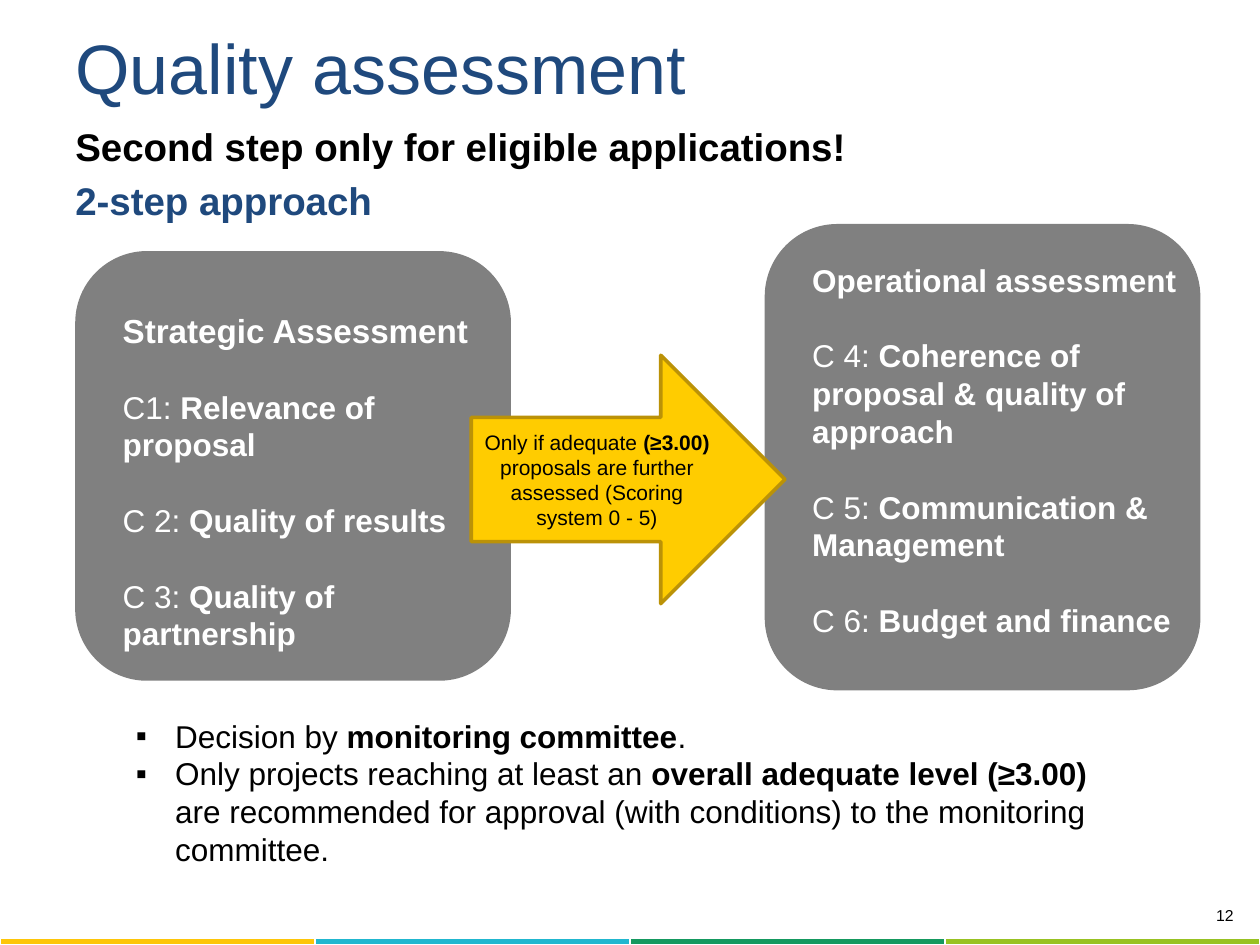
from lxml.etree import SubElement
from pptx import Presentation
from pptx.dml.color import RGBColor
from pptx.enum.shapes import MSO_SHAPE
from pptx.enum.text import MSO_ANCHOR, PP_ALIGN
from pptx.oxml.ns import qn
from pptx.util import Pt

COLORS = {
    "black": "000000", "white": "FFFFFF", "navy": "1F497D", "gray": "808080",
    "arrow": "FFCC00", "arrow_edge": "BB9207",
    "yellow": "FDC609", "cyan": "21B7CF", "green": "159960", "lime": "98C222",
}
FONT = "Arial"
LINE_RATIO = 1.2


def color(name):
    return RGBColor.from_string(COLORS[name])


def add_runs(paragraph, runs, size, ink):
    paragraph.line_spacing = Pt(round(size * LINE_RATIO, 1))
    for words, bold in runs:
        run = paragraph.add_run()
        run.text = words
        run.font.name = FONT
        run.font.size = Pt(size)
        run.font.bold = bold
        run.font.color.rgb = color(ink)


def add_text_frame(slide, left, top, width, height):
    frame = slide.shapes.add_textbox(Pt(left), Pt(top), Pt(width), Pt(height)).text_frame
    frame.word_wrap = True
    return frame


def next_paragraph(frame, index):
    return frame.add_paragraph() if index else frame.paragraphs[0]


def add_filled_shape(slide, preset, left, top, width, height, fill):
    shape = slide.shapes.add_shape(preset, Pt(left), Pt(top), Pt(width), Pt(height))
    shape.shadow.inherit = False
    shape.fill.solid()
    shape.fill.fore_color.rgb = color(fill)
    shape.line.fill.background()
    return shape


def add_heading(slide, left, top, width):
    title = add_text_frame(slide, left, top, width, 44)
    title.vertical_anchor = MSO_ANCHOR.MIDDLE
    add_runs(title.paragraphs[0], [("Quality assessment", False)], 40, "navy")

    intro = add_text_frame(slide, left, top + 51, width, 64)
    lines = [("Second step only for eligible applications!", "black"),
             ("2-step approach", "navy")]
    for index, (words, ink) in enumerate(lines):
        paragraph = next_paragraph(intro, index)
        if index:
            paragraph.space_before = Pt(4.4)
        add_runs(paragraph, [(words, True)], 22, ink)


def add_assessment(slide, left, top, width, height, text_top, heading, heading_size, criteria):
    add_filled_shape(slide, MSO_SHAPE.ROUNDED_RECTANGLE, left, top, width, height, "gray")
    frame = add_text_frame(slide, left + 20, top + text_top, width - 20, 187)
    add_runs(frame.paragraphs[0], [(heading, True)], heading_size, "white")
    for code, criterion in criteria:
        paragraph = frame.add_paragraph()
        paragraph.space_before = Pt(21.6)
        add_runs(paragraph, [(code, False), (criterion, True)], 18, "white")


def add_threshold_arrow(slide, left, top, width, height):
    arrow = add_filled_shape(slide, MSO_SHAPE.RIGHT_ARROW, left, top, width, height, "arrow")
    arrow.line.color.rgb = color("arrow_edge")
    arrow.line.width = Pt(2)
    frame = arrow.text_frame
    frame.word_wrap = True
    frame.vertical_anchor = MSO_ANCHOR.MIDDLE
    condition = frame.paragraphs[0]
    condition.alignment = PP_ALIGN.CENTER
    add_runs(condition, [
        ("Only if adequate ", False),
        ("(≥3.00) ", True),
        ("proposals are further assessed (Scoring system 0 - 5)", False),
    ], 12, "black")


def add_decision_list(slide, left, top, width, height):
    frame = add_text_frame(slide, left, top, width, height)
    decisions = [
        [("Decision by ", False), ("monitoring committee", True), (".", False)],
        [("Only projects reaching at least an ", False),
         ("overall adequate level (≥3.00) ", True),
         ("are recommended for approval (with conditions) to the monitoring committee.", False)],
    ]
    for index, runs in enumerate(decisions):
        paragraph = next_paragraph(frame, index)
        properties = paragraph._p.get_or_add_pPr()
        properties.set("marL", str(Pt(22.5)))
        properties.set("indent", str(-Pt(22.5)))
        SubElement(properties, qn("a:buFont"), typeface=FONT)
        SubElement(properties, qn("a:buChar"), char="▪")
        add_runs(paragraph, runs, 18, "black")


def add_footer(slide, left, top, width, height):
    number = add_text_frame(slide, left + width - 150, top - 22, 142, 22).paragraphs[0]
    number.alignment = PP_ALIGN.RIGHT
    add_runs(number, [("12", False)], 9, "black")

    bands = ["yellow", "cyan", "green", "lime"]
    table = slide.shapes.add_table(
        1, len(bands), Pt(left), Pt(top), Pt(width), Pt(height)).table
    for cell, band in zip(table.rows[0].cells, bands):
        cell.fill.solid()
        cell.fill.fore_color.rgb = color(band)
        cell.margin_left = cell.margin_right = cell.margin_top = cell.margin_bottom = 0
        cell.text_frame.paragraphs[0].font.size = Pt(1)


def main():
    presentation = Presentation()
    presentation.slide_width = Pt(720)
    presentation.slide_height = Pt(540)
    slide = presentation.slides.add_slide(presentation.slide_layouts[6])

    add_footer(slide, 0, 536, 720, 4)
    add_heading(slide, 36, 16, 648)
    add_assessment(slide, 43, 143.5, 249, 245.5, 30, "Strategic Assessment", 19, [
        ("C1: ", "Relevance of proposal"),
        ("C 2: ", "Quality of results"),
        ("C 3: ", "Quality of partnership"),
    ])
    add_assessment(slide, 437, 128, 249, 266.5, 17.5, "Operational assessment", 18, [
        ("C 4: ", "Coherence of proposal & quality of approach"),
        ("C 5: ", "Communication & Management"),
        ("C 6: ", "Budget and finance"),
    ])
    add_threshold_arrow(slide, 269.3, 203, 179.3, 142)
    add_decision_list(slide, 70.5, 406, 580.5, 117)
    presentation.save("out.pptx")


if __name__ == "__main__":
    main()
